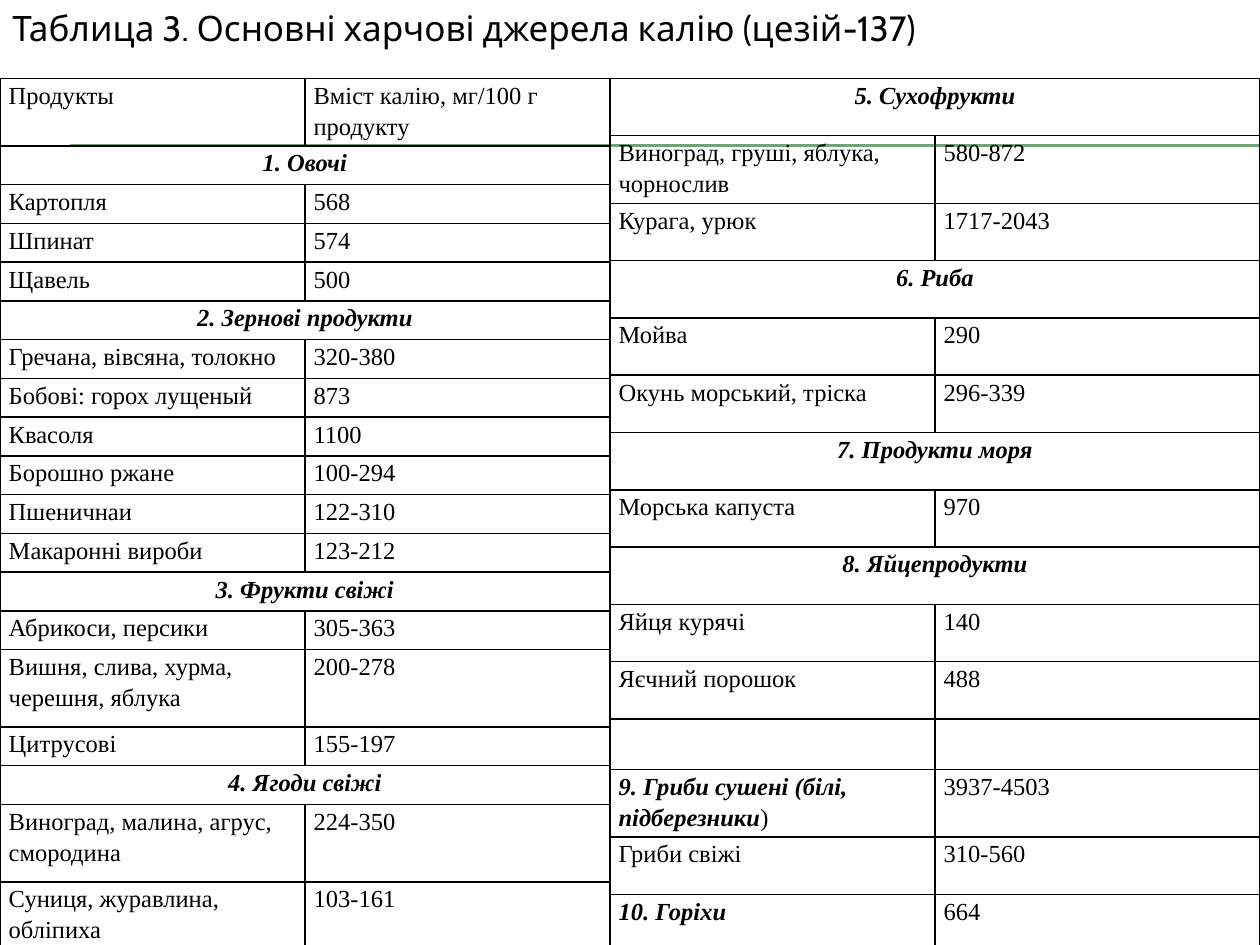
"""Build a slide with two tables of potassium content in food."""
from lxml import etree
from pptx import Presentation
from pptx.dml.color import RGBColor
from pptx.enum.shapes import MSO_CONNECTOR
from pptx.enum.text import MSO_ANCHOR, MSO_AUTO_SIZE, PP_ALIGN
from pptx.oxml import parse_xml
from pptx.oxml.ns import nsdecls, qn
from pptx.util import Pt

LINE = MSO_CONNECTOR.STRAIGHT
TOP = MSO_ANCHOR.TOP
GROW = MSO_AUTO_SIZE.SHAPE_TO_FIT_TEXT
LEFT, MID = PP_ALIGN.LEFT, PP_ALIGN.CENTER
SERIF = "Times New Roman"
BODY = {"name": SERIF, "size": Pt(14), "bold": False, "italic": False}
HEAD = {**BODY, "bold": True, "italic": True}
PARA = {"line_spacing": 1.15, "space_before": Pt(8.4)}
CELL = {"margin_left": Pt(5), "margin_right": Pt(5), "margin_top": 0,
        "margin_bottom": 0, "vertical_anchor": TOP}
PLAIN = {"first_row": False, "horz_banding": False}
MUSH = "9. Гриби сушені (білі, підберезники"
NUTS = "10. Горіхи"

VEG = [
    ("Продукты", "Вміст калію, мг/100 г продукту"),
    ("1. Овочі",),
    ("Картопля", "568"),
    ("Шпинат", "574"),
    ("Щавель", "500"),
    ("2. Зернові продукти",),
    ("Гречана, вівсяна, толокно", "320-380"),
    ("Бобові: горох лущеный", "873"),
    ("Квасоля", "1100"),
    ("Борошно ржане", "100-294"),
    ("Пшеничнаи", "122-310"),
    ("Макаронні вироби", "123-212"),
    ("3. Фрукти свіжі",),
    ("Абрикоси, персики", "305-363"),
    ("Вишня, слива, хурма, черешня, яблука", "200-278"),
    ("Цитрусові", "155-197"),
    ("4. Ягоди свіжі",),
    ("Виноград, малина, агрус, смородина", "224-350"),
    ("Суниця, журавлина, обліпиха", "103-161"),
]
DRY = [
    ("5. Сухофрукти",),
    ("Виноград, груші, яблука, чорнослив", "580-872"),
    ("Курага, урюк", "1717-2043"),
    ("6. Риба",),
    ("Мойва", "290"),
    ("Окунь морський, тріска", "296-339"),
    ("7. Продукти моря",),
    ("Морська капуста", "970"),
    ("8. Яйцепродукти",),
    ("Яйця курячі", "140"),
    ("Яєчний порошок", "488"),
    ("", ""),
    (MUSH, "3937-4503"),
    ("Гриби свіжі", "310-560"),
    (NUTS, "664"),
]
TABLES = [
    (VEG, 0, 174.24, 22.15, {0: 37.4, 14: 44.2, 17: 44.2, 18: 37.4}),
    (DRY, 348.48, 185.76, 32.75, {1: 38.6, 11: 28.5, 12: 38.6}),
]


def color(text):
    return RGBColor.from_string(text)


def write(para, text, look):
    run = para.add_run()
    run.text = text
    for key, val in look.items():
        setattr(run.font, key, val)
    run.font.color.rgb = color("000000")


deck = Presentation()
deck.slide_width, deck.slide_height = Pt(720), Pt(540)
slide = deck.slides.add_slide(deck.slide_layouts[6])

for y in (82.8, 83.5):
    rule = slide.shapes.add_connector(LINE, Pt(40.3), Pt(y), Pt(720), Pt(y))
    rule.line.color.rgb = color("72A376")
    rule.line.width = Pt(0.75)
    etree.SubElement(rule._element.spPr, qn("a:effectLst"))

title = slide.shapes.add_textbox(0, 0, Pt(579.6), Pt(31.5)).text_frame
title.word_wrap = True
title.auto_size = GROW
write(title.paragraphs[0], "Таблица 3. Основні харчові джерела калію (цезій-137)",
      {"name": "Cabin", "size": Pt(20)})

for rows, x, width, step, tall in TABLES:
    highs = [tall.get(i, step) for i in range(len(rows))]
    table = slide.shapes.add_table(len(rows), 2, Pt(x), Pt(44.8),
                                   Pt(2 * width), Pt(sum(highs))).table
    for key, val in PLAIN.items():
        setattr(table, key, val)
    for col in table.columns:
        col.width = Pt(width)
    for i, (row, high) in enumerate(zip(rows, highs)):
        table.rows[i].height = Pt(high)
        for cell in table.rows[i].cells:
            props = cell._tc.get_or_add_tcPr()
            for side in "LRTB":
                props.append(parse_xml(
                    f'<a:ln{side} {nsdecls("a")} w="12700"><a:solidFill>'
                    f'<a:srgbClr val="000000"/></a:solidFill></a:ln{side}>'))
            cell.fill.background()
        group = len(row) == 1
        if group:
            table.cell(i, 0).merge(table.cell(i, 1))
        for j, text in enumerate(row):
            if not text:
                continue
            cell = table.cell(i, j)
            for key, val in CELL.items():
                setattr(cell, key, val)
            para = cell.text_frame.paragraphs[0]
            para.alignment = MID if group else LEFT
            for key, val in PARA.items():
                setattr(para, key, val)
            write(para, text, HEAD if group or text in (MUSH, NUTS) else BODY)
            if text == MUSH:
                write(para, ")", BODY)

deck.save("out.pptx")
